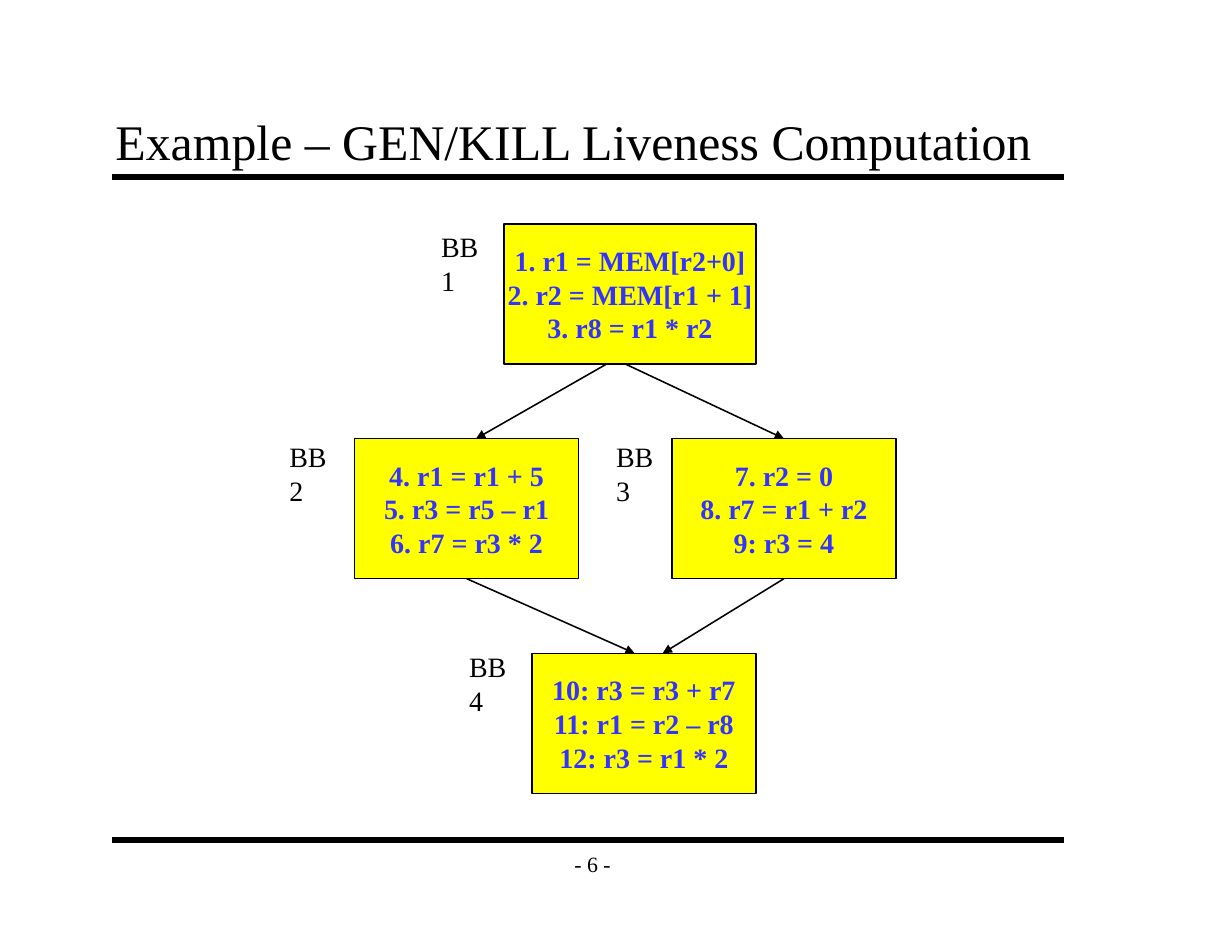
from dataclasses import dataclass

from lxml.etree import SubElement
from pptx import Presentation
from pptx.dml.color import RGBColor
from pptx.enum.shapes import MSO_CONNECTOR as Connector, MSO_SHAPE as Shape
from pptx.enum.text import MSO_ANCHOR as Anchor, MSO_AUTO_SIZE as AutoSize, PP_ALIGN as Align
from pptx.oxml.ns import qn
from pptx.util import Emu, Pt

EMU_PER_PX = 9525  # 96 px to the inch
FONT = "Times New Roman"
COLORS = {"ink": "000000", "block": "FFFF00", "code": "3333FF"}
BLOCK_HEIGHT = 120
LABEL_SIZE = (63, 38)
RULE_LEFT, RULE_RIGHT = 96, 912


@dataclass(frozen=True)
class Block:
    name: str
    left: int
    top: int
    width: int
    label_at: tuple[int, int]
    code: str


@dataclass(frozen=True)
class Edge:
    source: Block
    target: Block
    start_x: int
    end_x: int


BB1 = Block("BB1", 432, 192, 216, (368, 192),
            "1. r1 = MEM[r2+0]\n2. r2 = MEM[r1 + 1]\n3. r8 = r1 * r2")
BB2 = Block("BB2", 304, 376, 192, (238, 372),
            "4. r1 = r1 + 5\n5. r3 = r5 – r1\n6. r7 = r3 * 2")
BB3 = Block("BB3", 576, 376, 192, (518, 372),
            "7. r2 = 0\n8. r7 = r1 + r2\n9: r3 = 4")
BB4 = Block("BB4", 456, 560, 192, (392, 552),
            "10: r3 = r3 + r7\n11: r1 = r2 – r8\n12: r3 = r1 * 2")
BLOCKS = (BB1, BB2, BB3, BB4)
EDGES = (
    Edge(BB1, BB2, 520, 408),
    Edge(BB1, BB3, 536, 672),
    Edge(BB3, BB4, 672, 568),
    Edge(BB2, BB4, 400, 544),
)


def px(*lengths: int) -> list[Emu]:
    return [Emu(length * EMU_PER_PX) for length in lengths]


def rgb(name: str) -> RGBColor:
    return RGBColor.from_string(COLORS[name])


def write(shape, text: str, *, size: int = 18, color: str = "ink", bold: bool = False,
          align=Align.LEFT, anchor=Anchor.TOP, wrap: bool = False,
          auto_size=AutoSize.NONE, insets: tuple[int, int] = (10, 5)) -> None:
    frame = shape.text_frame
    frame.text = text
    frame.word_wrap = wrap
    frame.auto_size = auto_size
    frame.vertical_anchor = anchor
    frame.margin_left, frame.margin_top = px(*insets)
    frame.margin_right, frame.margin_bottom = px(*insets)
    for paragraph in frame.paragraphs:
        paragraph.alignment = align
        for run in paragraph.runs:
            run.font.name = FONT
            run.font.size = Pt(size)
            run.font.bold = bold
            run.font.color.rgb = rgb(color)


def draw_line(slide, start: tuple[int, int], end: tuple[int, int], *,
              width: int = 1, arrow: bool = False) -> None:
    line = slide.shapes.add_connector(Connector.STRAIGHT, *px(*start, *end))
    line.line.width = Pt(width)
    line.line.color.rgb = rgb("ink")
    if arrow:
        SubElement(line.line._get_or_add_ln(), qn("a:tailEnd"), type="triangle")
    SubElement(line._element.spPr, qn("a:effectLst"))


def draw_block(slide, block: Block) -> None:
    box = slide.shapes.add_shape(
        Shape.RECTANGLE, *px(block.left, block.top, block.width, BLOCK_HEIGHT))
    box.shadow.inherit = False
    box.fill.solid()
    box.fill.fore_color.rgb = rgb("block")
    box.line.color.rgb = rgb("ink")
    box.line.width = Pt(1)
    write(box, block.code, color="code", bold=True, align=Align.CENTER, anchor=Anchor.MIDDLE)


def draw_label(slide, block: Block) -> None:
    label = slide.shapes.add_textbox(*px(*block.label_at, *LABEL_SIZE))
    write(label, block.name, auto_size=AutoSize.SHAPE_TO_FIT_TEXT)


def draw_edge(slide, edge: Edge) -> None:
    draw_line(slide, (edge.start_x, edge.source.top + BLOCK_HEIGHT),
              (edge.end_x, edge.target.top), arrow=True)


def main() -> None:
    deck = Presentation()
    deck.slide_width, deck.slide_height = px(1056, 816)
    slide = deck.slides.add_slide(deck.slide_layouts[5])

    for y in (152, 720):
        draw_line(slide, (RULE_LEFT, y), (RULE_RIGHT, y), width=4)
    page_number = slide.shapes.add_textbox(*px(472, 720, 72, 40))
    write(page_number, "- 6 -", size=14, align=Align.CENTER, anchor=Anchor.MIDDLE,
          insets=(11, 6))

    title = slide.shapes.title
    title.left, title.top, title.width, title.height = px(88, 88, 816, 64)
    write(title, "Example – GEN/KILL Liveness Computation", size=32,
          anchor=Anchor.BOTTOM, wrap=True, insets=(11, 6))

    for block in BLOCKS:
        draw_block(slide, block)
    for edge in EDGES:
        draw_edge(slide, edge)
    for block in BLOCKS:
        draw_label(slide, block)

    deck.save("out.pptx")


if __name__ == "__main__":
    main()
